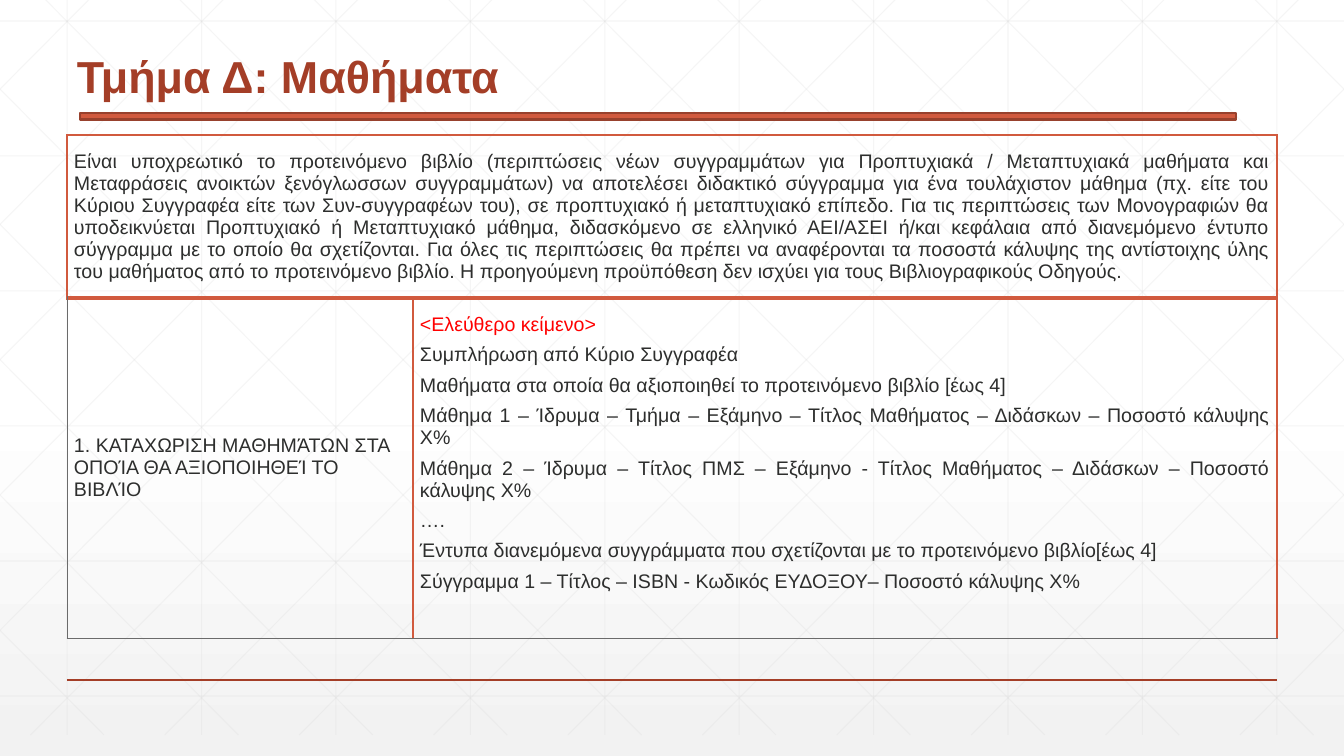
"""Build the slide about courses: title, rule, table and a faint lattice behind them."""
from lxml import etree
from pptx import Presentation
from pptx import util as u
from pptx.dml.color import RGBColor
from pptx.enum import shapes, text
from pptx.oxml.ns import qn

TITLE = "Τμήμα Δ: Μαθήματα"
INTRO = [
    "Είναι υποχρεωτικό το προτεινόμενο βιβλίο (περιπτώσεις νέων συγγραμμάτων για Προπτυχιακά / "
    "Μεταπτυχιακά μαθήματα και Μεταφράσεις ανοικτών ξενόγλωσσων συγγραμμάτων) να αποτελέσει "
    "διδακτικό σύγγραμμα για ένα τουλάχιστον μάθημα (πχ. είτε του Κύριου Συγγραφέα είτε των "
    "Συν-συγγραφέων του), σε προπτυχιακό ή μεταπτυχιακό επίπεδο. Για τις περιπτώσεις των "
    "Μονογραφιών θα υποδεικνύεται Προπτυχιακό ή Μεταπτυχιακό μάθημα, διδασκόμενο σε ελληνικό "
    "ΑΕΙ/ΑΣΕΙ ή/και κεφάλαια από διανεμόμενο έντυπο σύγγραμμα με το οποίο θα σχετίζονται. Για "
    "όλες τις περιπτώσεις θα πρέπει να αναφέρονται τα ποσοστά κάλυψης της αντίστοιχης ύλης του "
    "μαθήματος από το προτεινόμενο βιβλίο. Η προηγούμενη προϋπόθεση δεν ισχύει για τους "
    "Βιβλιογραφικούς Οδηγούς."
]
FIELD = ["1. ΚΑΤΑΧΩΡΙΣΗ ΜΑΘΗΜΆΤΩΝ ΣΤΑ ΟΠΟΊΑ ΘΑ ΑΞΙΟΠΟΙΗΘΕΊ ΤΟ ΒΙΒΛΊΟ"]
ENTRIES = [
    "<Ελεύθερο κείμενο>",
    "Συμπλήρωση από Κύριο Συγγραφέα",
    "Μαθήματα στα οποία θα αξιοποιηθεί το προτεινόμενο βιβλίο [έως 4]",
    "Μάθημα 1 – Ίδρυμα – Τμήμα – Εξάμηνο – Τίτλος Μαθήματος – Διδάσκων – Ποσοστό κάλυψης Χ%",
    "Μάθημα 2 – Ίδρυμα – Τίτλος ΠΜΣ – Εξάμηνο - Τίτλος Μαθήματος – Διδάσκων – Ποσοστό κάλυψης Χ%",
    "….",
    "Έντυπα διανεμόμενα συγγράμματα που σχετίζονται με το προτεινόμενο βιβλίο[έως 4]",
    "Σύγγραμμα 1 – Τίτλος – ISBN - Κωδικός ΕΥΔΟΞΟΥ– Ποσοστό κάλυψης Χ%",
]
WIDTH, HEIGHT = 1344, 756
LATTICE_TOP, LATTICE_BOTTOM = -21, 735
COLUMNS, ROWS = (346, 864), (163, 340)
INK, RUST, ORANGE, GREY, RED = "2D2E2D", "A43E27", "D15A3E", "6B6B6B", "FF0000"
JUSTIFY, LEFT = text.PP_ALIGN.JUSTIFY, text.PP_ALIGN.LEFT
HEADER_EDGES = {"L": (ORANGE, 1), "R": (ORANGE, 1), "T": (ORANGE, 1), "B": (ORANGE, 3)}
FIELD_EDGES = {"L": (GREY, 0.75), "R": (ORANGE, 1), "T": (ORANGE, 3), "B": (GREY, 0.75)}
ENTRY_EDGES = {**FIELD_EDGES, "L": (ORANGE, 1)}


def px(length):
    return u.Emu(round(length * 914400 / 100.8))


def color(value):
    return RGBColor.from_string(value)


def apply(target, values):
    for name, value in values.items():
        setattr(target, name, value)


def write(paragraph, words, ink, size, bold=False):
    run = paragraph.add_run()
    run.text = words
    apply(run.font, {"name": "Arial", "size": u.Pt(size), "bold": bold})
    run.font.color.rgb = color(ink)


def add_line(slide, ends, ink, width, alpha=None):
    line = slide.shapes.add_connector(shapes.MSO_CONNECTOR.STRAIGHT, *map(px, ends))
    line.line.color.rgb = color(ink)
    line.line.width = u.Pt(width)
    properties = line._element.spPr
    if alpha:
        fill = properties.find(".//" + qn("a:srgbClr"))
        etree.SubElement(fill, qn("a:alpha")).set("val", str(alpha * 1000))
    etree.SubElement(properties, qn("a:effectLst"))


def lattice_lines():
    step, depth, run = WIDTH / 10, LATTICE_BOTTOM - LATTICE_TOP, 751
    for column in range(10):
        x = step * (column + 0.5)
        yield x, LATTICE_TOP, x, LATTICE_BOTTOM
    for row in range(6):
        y = 21 + 135 * row
        yield 0, y, WIDTH, y
    for index in range(-5, 10):
        start = 25 + step * index
        x1, x2 = max(start, 0), min(start + run, WIDTH)
        y1, y2 = (LATTICE_TOP + (x - start) * depth / run for x in (x1, x2))
        yield x1, y1, x2, y2
        yield WIDTH - x1, y1, WIDTH - x2, y2


def set_edges(cell, edges):
    properties = cell._tc.get_or_add_tcPr()
    for position, (side, (ink, width)) in enumerate(edges.items()):
        edge = etree.Element(qn("a:ln" + side), w=str(u.Pt(width)))
        fill = etree.SubElement(edge, qn("a:solidFill"))
        etree.SubElement(fill, qn("a:srgbClr")).set("val", ink)
        properties.insert(position, edge)


def fill_cell(cell, lines, alignment, first_ink=INK, bottom=0):
    apply(cell, {"margin_left": px(7), "margin_right": px(7), "margin_top": 0,
                 "margin_bottom": px(bottom), "vertical_anchor": text.MSO_ANCHOR.MIDDLE})
    for index, words in enumerate(lines):
        paragraph = cell.text_frame.add_paragraph() if index else cell.text_frame.paragraphs[0]
        paragraph.alignment = alignment
        if index:
            paragraph.space_before = u.Pt(6)
        write(paragraph, words, INK if index else first_ink, 14)


def add_background(slide):
    fill = slide.background.fill
    fill.gradient()
    fill.gradient_angle = 270
    for stop, (ink, position) in zip(fill.gradient_stops, (("FFFFFF", 0.53), ("F2F2F2", 1))):
        stop.color.rgb = color(ink)
        stop.position = position
    for ends in lattice_lines():
        add_line(slide, ends, "D8D8D8", 0.75, alpha=24)
    add_line(slide, (67, 680, 1277, 680), RUST, 1)


def add_heading(slide):
    bar = slide.shapes.add_shape(shapes.MSO_SHAPE.RECTANGLE, *map(px, (80, 113, 1156, 7)))
    bar.shadow.inherit = False
    bar.fill.solid()
    bar.fill.fore_color.rgb = color(ORANGE)
    bar.line.color.rgb = color("98412D")
    bar.line.width = u.Pt(2)
    title = slide.shapes.add_textbox(*map(px, (67, 23, 1210, 112))).text_frame
    apply(title, {"word_wrap": True, "vertical_anchor": text.MSO_ANCHOR.MIDDLE})
    title.paragraphs[0].line_spacing = 0.9
    write(title.paragraphs[0], TITLE, RUST, 32, bold=True)


def add_courses_table(slide):
    frame = slide.shapes.add_table(2, 2, *map(px, (67, 135, sum(COLUMNS), sum(ROWS))))
    table = frame.table
    apply(table, {"first_row": False, "horz_banding": False})
    for column, width in zip(table.columns, COLUMNS):
        column.width = px(width)
    for row, height in zip(table.rows, ROWS):
        row.height = px(height)
    header, header_end, field, entries = table.iter_cells()
    header.merge(header_end)
    fill_cell(header, INTRO, JUSTIFY)
    fill_cell(field, FIELD, LEFT)
    fill_cell(entries, ENTRIES, JUSTIFY, first_ink=RED, bottom=30)
    borders = (HEADER_EDGES, HEADER_EDGES, FIELD_EDGES, ENTRY_EDGES)
    for cell, edges in zip(table.iter_cells(), borders):
        cell.fill.background()
        set_edges(cell, edges)


def main():
    presentation = Presentation()
    apply(presentation, {"slide_width": px(WIDTH), "slide_height": px(HEIGHT)})
    slide = presentation.slides.add_slide(presentation.slide_layouts[6])
    add_background(slide)
    add_heading(slide)
    add_courses_table(slide)
    presentation.save("out.pptx")


if __name__ == "__main__":
    main()
